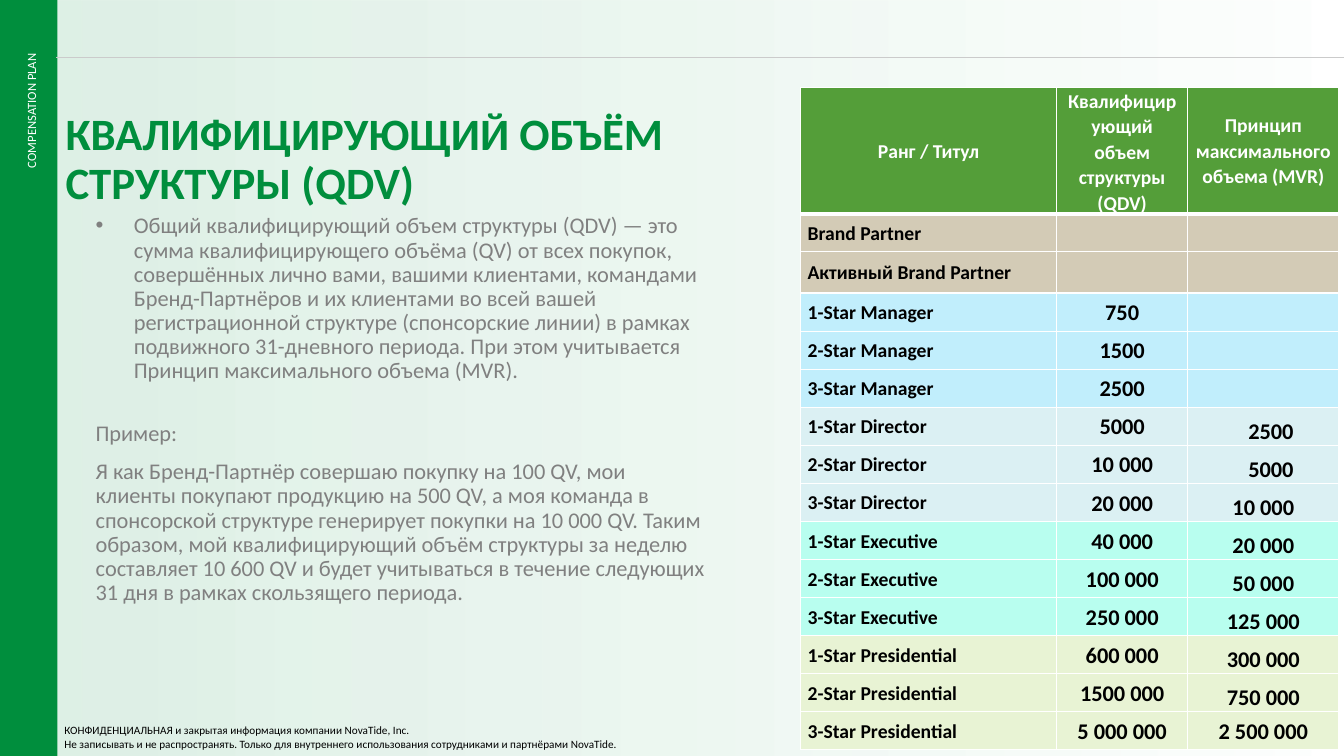
from pptx import Presentation
from pptx.dml.color import RGBColor
from pptx.enum.shapes import MSO_CONNECTOR, MSO_SHAPE
from pptx.enum.text import MSO_ANCHOR, MSO_AUTO_SIZE, PP_ALIGN
from pptx.oxml.ns import qn
from pptx.util import Inches, Pt
from lxml import etree

LEFT, CENTER, RIGHT = PP_ALIGN.LEFT, PP_ALIGN.CENTER, PP_ALIGN.RIGHT
TOP, MIDDLE, BOTTOM = MSO_ANCHOR.TOP, MSO_ANCHOR.MIDDLE, MSO_ANCHOR.BOTTOM
RECT, STRAIGHT = MSO_SHAPE.RECTANGLE, MSO_CONNECTOR.STRAIGHT
GREEN, WHITE, BLACK, GRAY = "008E3D", "FFFFFF", "000000", "808080"

# Content
TITLE = "КВАЛИФИЦИРУЮЩИЙ ОБЪЁМ СТРУКТУРЫ (QDV)"
SIDE = "COMPENSATION PLAN"
# Text and space before, in points
BODY = [
    ("Общий квалифицирующий объем структуры (QDV) — это сумма "
     "квалифицирующего объёма (QV) от всех покупок, совершённых лично вами, "
     "вашими клиентами, командами Бренд-Партнёров и их клиентами во всей вашей "
     "регистрационной структуре (спонсорские линии) в рамках подвижного "
     "31-дневного периода. При этом учитывается Принцип максимального "
     "объема (MVR).", 0),
    ("Пример:", 27.5),
    ("Я как Бренд-Партнёр совершаю покупку на 100 QV, мои клиенты покупают "
     "продукцию на 500 QV, а моя команда в спонсорской структуре генерирует "
     "покупки на 10 000 QV. Таким образом, мой квалифицирующий объём структуры "
     "за неделю составляет 10 600 QV и будет учитываться в течение следующих "
     "31 дня в рамках скользящего периода.", 10),
]
NOTES = [
    "КОНФИДЕНЦИАЛЬНАЯ и закрытая информация компании NovaTide, Inc.",
    "Не записывать и не распространять. Только для внутреннего использования "
    "сотрудниками и партнёрами NovaTide.",
]
HEAD = ("Ранг / Титул", "Квалифицирующий объем структуры (QDV)",
        "Принцип максимального объема (MVR)")
# Fill and ranks of each tier
TIERS = [
    ("D3CBB6", [("Brand Partner", "", ""), ("Активный Brand Partner", "", "")]),
    ("C1EEFC", [("1-Star Manager", "750", ""), ("2-Star Manager", "1500", ""),
                ("3-Star Manager", "2500", "")]),
    ("DBF0F3", [("1-Star Director", "5000", "2500"),
                ("2-Star Director", "10 000", "5000"),
                ("3-Star Director", "20 000", "10 000")]),
    ("B8FEEF", [("1-Star Executive", "40 000", "20 000"),
                ("2-Star Executive", "100 000", "50 000"),
                ("3-Star Executive", "250 000", "125 000")]),
    ("E8F3D4", [("1-Star Presidential", "600 000", "300 000"),
                ("2-Star Presidential", "1500 000", "750 000"),
                ("3-Star Presidential", "5 000 000", "2 500 000")]),
]
COLS = (2.54, 1.3, 1.5)
HIGH, HEAD_H, TALL_H = 6.57, 1.25, 0.41


def rgb(code):
    return RGBColor.from_string(code)


def style(para, size, color, bold=False, align=LEFT, space=None, before=0):
    para.alignment = align
    para.space_before = Pt(before)
    if space:
        para.line_spacing = space
    font = para.font
    font.name, font.size, font.bold = "Calibri", Pt(size), bold
    font.color.rgb = rgb(color)


def fade(node, share):
    etree.SubElement(node, qn("a:alpha"), val=str(share * 1000))


def block(shapes, x, y, w, h):
    box = shapes.add_textbox(Inches(x), Inches(y), Inches(w), Inches(h))
    box.text_frame.word_wrap = True
    return box


def panel(shapes, x, w, h):
    rect = shapes.add_shape(RECT, Inches(x), 0, Inches(w), Inches(h))
    rect.shadow.inherit = False
    rect.line.fill.background()
    return rect


def edge(cell, side, width):
    line = etree.SubElement(cell._tc.get_or_add_tcPr(), qn("a:" + side),
                            w=str(Pt(width)))
    fill = etree.SubElement(line, qn("a:solidFill"))
    etree.SubElement(fill, qn("a:srgbClr"), val=WHITE)


deck = Presentation()
deck.slide_width, deck.slide_height = Inches(13.33), Inches(7.5)
slide = deck.slides.add_slide(deck.slide_layouts[5])
shapes = slide.shapes

# Pale backdrop fading to the right
back = panel(shapes, 0.57, 12.76, 7.5)
back.fill.gradient()
back.fill.gradient_angle = 0
for stop, place, share in zip(back.fill.gradient_stops, (0, 0.99), (13, 0)):
    stop.position = place
    stop.color.rgb = rgb(GREEN)
for node, share in zip(back._element.spPr.iter(qn("a:srgbClr")), (13, 0)):
    fade(node, share)

# Side band and its label
band = panel(shapes, 0, 0.57, 7.53)
band.fill.solid()
band.fill.fore_color.rgb = rgb(GREEN)
label = block(shapes, -0.51, 1.13, 1.64, 0.25)
label.rotation = 270
label.text_frame.text = SIDE
style(label.text_frame.paragraphs[0], 9, WHITE, align=RIGHT)

# Top rule with a faint highlight over it
for color, share in (("BFBFBF", 100), (WHITE, 18)):
    rule = shapes.add_connector(STRAIGHT, Inches(0.56), Inches(0.57),
                                Inches(13.33), Inches(0.57))
    rule.line.width = Pt(0.5)
    rule.line.color.rgb = rgb(color)
    fade(next(rule._element.spPr.iter(qn("a:srgbClr"))), share)
    etree.SubElement(rule._element.spPr, qn("a:effectLst"))

# Title
title = shapes.title
title.left, title.top = Inches(0.55), Inches(1.06)
title.width, title.height = Inches(7.39), Inches(0.49)
frame = title.text_frame
frame.text = TITLE
frame.word_wrap, frame.auto_size = True, MSO_AUTO_SIZE.NONE
frame.vertical_anchor = TOP
style(frame.paragraphs[0], 32, GREEN, True, space=0.9)
shapes._spTree.append(title._element)

# Body text, first paragraph bulleted
frame = block(shapes, 0.85, 2.08, 6.3, 4.75).text_frame
frame.text = "\n".join(text for text, gap in BODY)
props = frame.paragraphs[0]._p.get_or_add_pPr()
props.set("marL", str(Inches(0.38)))
props.set("indent", str(Inches(-0.38)))
etree.SubElement(props, qn("a:buFont"), typeface="Arial")
etree.SubElement(props, qn("a:buChar"), char="•")
for para, (text, gap) in zip(frame.paragraphs, BODY):
    style(para, 16, GRAY, space=0.9, before=gap)

# Rank table
rows = [("549E39", HEAD)] + [(fill, row) for fill, tier in TIERS for row in tier]
last = len(rows) - 1
step = (HIGH - HEAD_H - TALL_H) / (last - 1)
table = shapes.add_table(len(rows), len(COLS), Inches(7.94), Inches(0.87),
                         Inches(sum(COLS)), Inches(HIGH)).table
table.horz_banding = False
for col, width in zip(table.columns, COLS):
    col.width = Inches(width)
for r, (fill, row) in enumerate(rows):
    table.rows[r].height = Inches({0: HEAD_H, 2: TALL_H}.get(r, step))
    for c, text in enumerate(row):
        cell = table.cell(r, c)
        cell.text = text
        cell.margin_top = cell.margin_bottom = 0
        # Short volumes sit a little to the right
        short = c == 2 and len(text) == 4
        cell.margin_left = Inches(0.22 if short else 0.07)
        cell.margin_right = Inches(0.07)
        cell.vertical_anchor = BOTTOM if c == 2 and 0 < r < last else MIDDLE
        for side in ("lnL", "lnR", "lnT", "lnB"):
            thick = (r, side) in ((0, "lnB"), (1, "lnT"))
            edge(cell, side, 3 if thick else 1)
        cell.fill.solid()
        cell.fill.fore_color.rgb = rgb(fill)
        style(cell.text_frame.paragraphs[0], 16 if r and c and text else 14,
              BLACK if r else WHITE, True,
              LEFT if r and c == 0 else CENTER, 1.07)

# Confidentiality note
frame = block(shapes, 0.54, 7.13, 5.91, 0.37).text_frame
frame.text = "\n".join(NOTES)
for para in frame.paragraphs:
    style(para, 8, BLACK)

deck.save("out.pptx")
